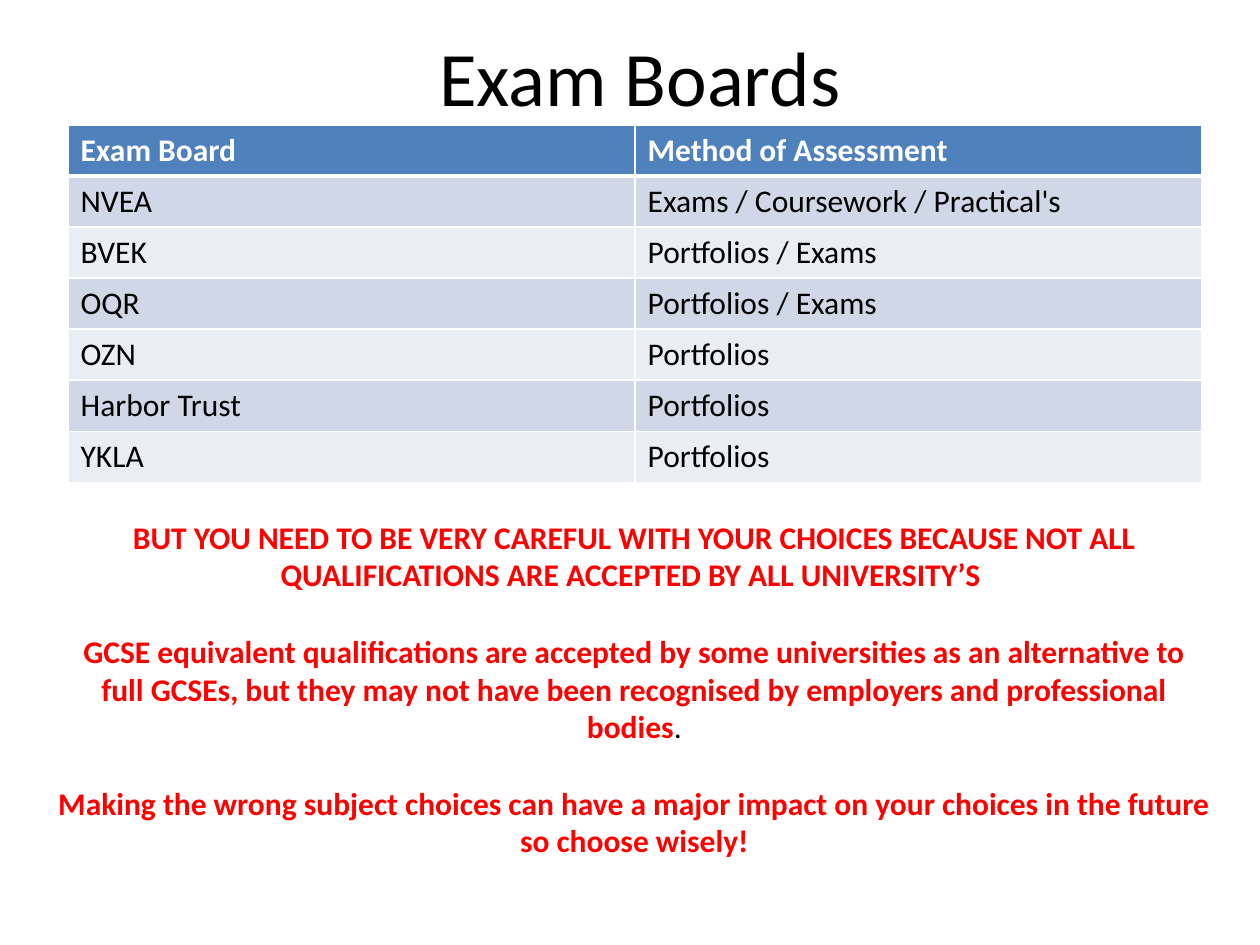
from lxml.etree import SubElement
from pptx import Presentation
from pptx.dml.color import RGBColor
from pptx.enum.text import MSO_ANCHOR, PP_ALIGN
from pptx.oxml.ns import qn
from pptx.util import Inches, Pt

COLORS = {
    "black": "000000",
    "white": "FFFFFF",
    "red": "FF0000",
    "header": "4F81BD",
    "odd row": "D0D8E8",
    "even row": "E9EDF4",
}
NO_BREAK_SPACE = chr(160)


def add_text(paragraph, text, size=18, color="black", bold=False, align=PP_ALIGN.LEFT):
    paragraph.alignment = align
    run = paragraph.add_run()
    run.text = text.replace("~", NO_BREAK_SPACE)  # "~" marks a space that must not break
    run.font.name = "Calibri"
    run.font.size = Pt(size)
    run.font.bold = bold
    run.font.color.rgb = RGBColor.from_string(COLORS[color])


def set_borders(cell, top_width, bottom_width):
    properties = cell._tc.get_or_add_tcPr()
    sides = [("a:lnL", 1), ("a:lnR", 1), ("a:lnT", top_width), ("a:lnB", bottom_width)]
    for position, (side, width) in enumerate(sides):
        line = SubElement(properties, qn(side), w=str(Pt(width)))
        fill = SubElement(line, qn("a:solidFill"))
        SubElement(fill, qn("a:srgbClr"), val=COLORS["white"])
        properties.insert(position, line)


presentation = Presentation()
presentation.slide_width = Inches(10)
presentation.slide_height = Inches(7.5)
slide = presentation.slides.add_slide(presentation.slide_layouts[6])

# Title
title = slide.shapes.add_textbox(Inches(0.58), Inches(0.13), Inches(9), Inches(0.94))
title.text_frame.word_wrap = True
title.text_frame.vertical_anchor = MSO_ANCHOR.MIDDLE
add_text(title.text_frame.paragraphs[0], "Exam Boards", size=44, align=PP_ALIGN.CENTER)

# Table of exam boards
rows = [
    ("Exam Board", "Method of Assessment"),
    ("NVEA", "Exams / Coursework / Practical's"),
    ("BVEK", "Portfolios / Exams"),
    ("OQR", "Portfolios / Exams"),
    ("OZN", "Portfolios"),
    ("Harbor Trust", "Portfolios"),
    ("YKLA", "Portfolios"),
]
table = slide.shapes.add_table(
    len(rows), 2, Inches(0.54), Inches(0.99), Inches(9), Inches(2.84)
).table
for row_index, row in enumerate(rows):
    is_header = row_index == 0
    fill_name = "header" if is_header else "odd row" if row_index % 2 else "even row"
    for column_index, text in enumerate(row):
        cell = table.cell(row_index, column_index)
        cell.fill.solid()
        cell.fill.fore_color.rgb = RGBColor.from_string(COLORS[fill_name])
        # The thick line below the header is shared with the first body row
        set_borders(cell, top_width=3 if row_index == 1 else 1,
                    bottom_width=3 if is_header else 1)
        add_text(cell.text_frame.paragraphs[0], text,
                 color="white" if is_header else "black", bold=is_header)

# Warnings below the table
warnings = [
    "BUT YOU NEED TO BE VERY CAREFUL WITH YOUR CHOICES BECAUSE NOT ALL "
    "QUALIFICATIONS ARE ACCEPTED BY ALL UNIVERSITY’S ",
    "GCSE equivalent~qualifications are~accepted~by some~universities~as an "
    "alternative to full~GCSEs, but they may not have been recognised by "
    "employers and professional bodies",
    "Making the wrong subject choices can have a major impact on your choices "
    "in the future so choose wisely!",
]
warning_box = slide.shapes.add_textbox(Inches(0.35), Inches(4.06), Inches(9.37), Inches(2.83))
text_frame = warning_box.text_frame
text_frame.word_wrap = True
for index, text in enumerate(warnings):
    paragraph = text_frame.paragraphs[0] if index == 0 else text_frame.add_paragraph()
    if index > 0:
        paragraph.space_before = Pt(22)
    add_text(paragraph, text, color="red", bold=True, align=PP_ALIGN.CENTER)
add_text(text_frame.paragraphs[1], ".", align=PP_ALIGN.CENTER)

presentation.save("out.pptx")
